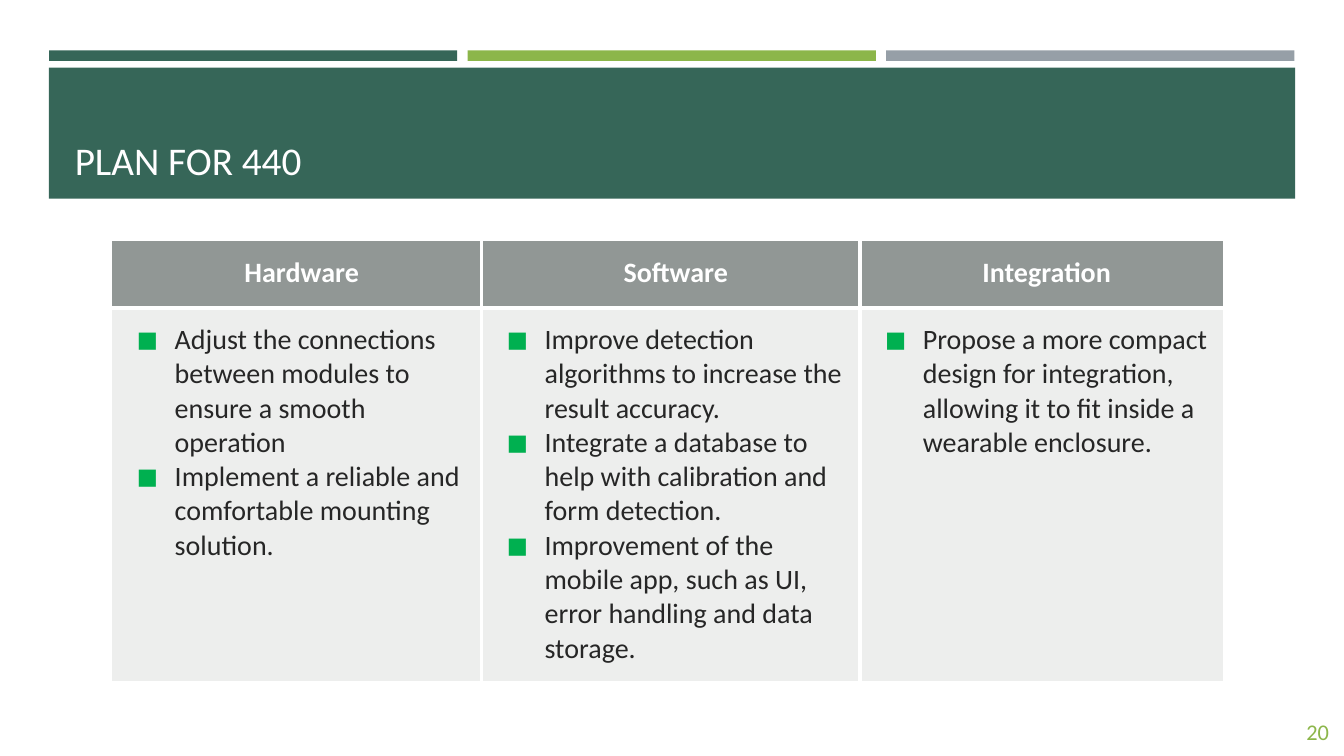
from dataclasses import dataclass

from lxml import etree
from pptx import Presentation
from pptx import util as u
from pptx.dml import color
from pptx.enum import shapes, text
from pptx.oxml import ns


@dataclass(frozen=True)
class Theme:
    font: str = "Calibri"
    green: str = "366658"
    lime: str = "8CB64A"
    grey: str = "969FA7"
    header_fill: str = "636B68"
    body_fill: str = "878E8B"
    bullet: str = "00B050"
    ink: str = "262626"
    white: str = "FFFFFF"
    title_text: str = "FFFEFF"
    title_size: float = 28
    table_size: float = 20
    number_size: float = 16
    header_opacity: int = 70
    body_opacity: int = 15
    border_width: float = 3


@dataclass(frozen=True)
class Box:
    left: float
    top: float
    width: float
    height: float

    def lengths(self) -> tuple:
        return tuple(u.Pt(v) for v in (self.left, self.top, self.width, self.height))


@dataclass(frozen=True)
class Band:
    box: Box
    fill: str


@dataclass(frozen=True)
class PlanColumn:
    heading: str
    width: float
    items: tuple[str, ...]


THEME = Theme()
BAR_LEFT, BAR_PITCH = 35, 299
BANDS = [
    Band(Box(BAR_LEFT + i * BAR_PITCH, 36, 291.6, 7.6), fill)
    for i, fill in enumerate((THEME.green, THEME.lime, THEME.grey))
] + [Band(Box(34.9, 48.3, 890.3, 93.7), THEME.green)]
TITLE_BOX = Box(46.2, 55.2, 868.3, 79.7)
NUMBER_BOX = Box(873.5, 508.3, 82.8, 28.8)
TABLE_LEFT, TABLE_TOP = 79.8, 171.8
ROW_HEIGHTS = (48, 266.8)
PLAN = [
    PlanColumn("Hardware", 264.2, (
        "Adjust the connections between modules to ensure a smooth operation",
        "Implement a reliable and comfortable mounting solution.",
    )),
    PlanColumn("Software", 270.2, (
        "Improve detection algorithms to increase the result accuracy.",
        "Integrate a database to help with calibration and form detection.",
        "Improvement of the mobile app, such as UI, error handling and data storage.",
    )),
    PlanColumn("Integration", 259.6, (
        "Propose a more compact design for integration, allowing it to fit inside a wearable enclosure.",
    )),
]


def rgb(value: str) -> color.RGBColor:
    return color.RGBColor.from_string(value)


def add_child(parent, tag: str, **attributes: str):
    child = etree.SubElement(parent, ns.qn(tag))
    for name, value in attributes.items():
        child.set(name, value)
    return child


def style_runs(paragraph, size: float, ink: str, bold: bool = False) -> None:
    for run in paragraph.runs:
        run.font.name = THEME.font
        run.font.size = u.Pt(size)
        run.font.bold = bold
        run.font.color.rgb = rgb(ink)


def add_band(slide, band: Band) -> None:
    shape = slide.shapes.add_shape(shapes.MSO_SHAPE.RECTANGLE, *band.box.lengths())
    shape.shadow.inherit = False
    shape.fill.solid()
    shape.fill.fore_color.rgb = rgb(band.fill)
    shape.line.fill.background()


def add_title(slide, words: str) -> None:
    title = slide.shapes.title
    title.element.getparent().append(title.element)
    title.left, title.top, title.width, title.height = TITLE_BOX.lengths()
    frame = title.text_frame
    frame.text = words
    frame.auto_size = text.MSO_AUTO_SIZE.NONE
    frame.vertical_anchor = text.MSO_ANCHOR.BOTTOM
    frame.paragraphs[0].alignment = text.PP_ALIGN.LEFT
    style_runs(frame.paragraphs[0], THEME.title_size, THEME.title_text)


def add_bullet(paragraph) -> None:
    properties = paragraph._p.get_or_add_pPr()
    indent = u.Pt(27)
    properties.set("marL", str(indent))
    properties.set("indent", str(-indent))
    add_child(add_child(properties, "a:buClr"), "a:srgbClr", val=THEME.bullet)
    add_child(properties, "a:buSzPct", val="80000")
    add_child(properties, "a:buFont", typeface=THEME.font)
    add_child(properties, "a:buChar", char="■")


def format_cell(cell, fill: str, opacity: int, edges: list[str]) -> None:
    cell.margin_left = u.Pt(18)
    cell.margin_right = cell.margin_top = cell.margin_bottom = u.Pt(10.8)
    properties = cell._tc.get_or_add_tcPr()
    for edge in edges:
        line = add_child(properties, f"a:ln{edge}", w=str(u.Pt(THEME.border_width)))
        add_child(add_child(line, "a:solidFill"), "a:srgbClr", val=THEME.white)
    cell.fill.solid()
    cell.fill.fore_color.rgb = rgb(fill)
    tint = properties.find(f"{ns.qn('a:solidFill')}/{ns.qn('a:srgbClr')}")
    add_child(tint, "a:alpha", val=str(opacity * 1000))


def add_plan_table(slide, plan: list[PlanColumn]) -> None:
    box = Box(TABLE_LEFT, TABLE_TOP, sum(c.width for c in plan), sum(ROW_HEIGHTS))
    table = slide.shapes.add_table(len(ROW_HEIGHTS), len(plan), *box.lengths()).table
    for row, height in zip(table.rows, ROW_HEIGHTS):
        row.height = u.Pt(height)
    for index, column in enumerate(plan):
        table.columns[index].width = u.Pt(column.width)
        sides = ["L"] * (index > 0) + ["R"] * (index < len(plan) - 1)

        header = table.cell(0, index)
        format_cell(header, THEME.header_fill, THEME.header_opacity, sides + ["B"])
        header.text_frame.text = column.heading
        heading = header.text_frame.paragraphs[0]
        heading.alignment = text.PP_ALIGN.CENTER
        style_runs(heading, THEME.table_size, THEME.white, bold=True)

        body = table.cell(1, index)
        format_cell(body, THEME.body_fill, THEME.body_opacity, sides + ["T"])
        body.text_frame.text = "\n".join(column.items)
        for paragraph in body.text_frame.paragraphs:
            add_bullet(paragraph)
            style_runs(paragraph, THEME.table_size, THEME.ink)


def add_slide_number(slide, number: str) -> None:
    frame = slide.shapes.add_textbox(*NUMBER_BOX.lengths()).text_frame
    frame.word_wrap = True
    frame.vertical_anchor = text.MSO_ANCHOR.MIDDLE
    frame.text = number
    frame.paragraphs[0].alignment = text.PP_ALIGN.RIGHT
    style_runs(frame.paragraphs[0], THEME.number_size, THEME.lime)


def main() -> None:
    presentation = Presentation()
    presentation.slide_width, presentation.slide_height = u.Pt(960), u.Pt(540)
    slide = presentation.slides.add_slide(presentation.slide_layouts.get_by_name("Title Only"))
    for band in BANDS:
        add_band(slide, band)
    add_title(slide, "PLAN FOR 440")
    add_plan_table(slide, PLAN)
    add_slide_number(slide, "20")
    presentation.save("out.pptx")


if __name__ == "__main__":
    main()
